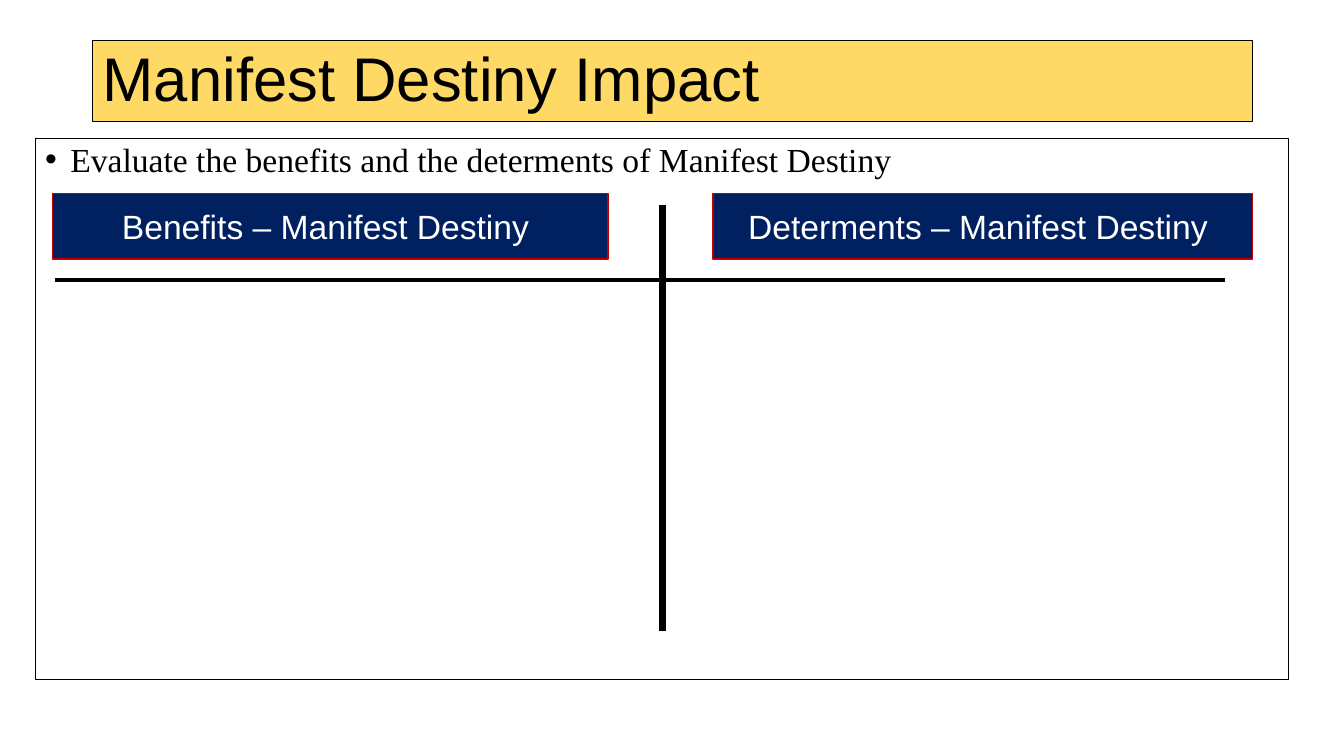
from pptx import Presentation
from pptx.dml.color import RGBColor
from pptx.enum.shapes import MSO_CONNECTOR, MSO_SHAPE
from pptx.enum.text import MSO_ANCHOR, PP_ALIGN
from pptx.oxml.ns import qn
from pptx.util import Emu, Pt
from lxml import etree

RECTANGLE = MSO_SHAPE.RECTANGLE
STRAIGHT = MSO_CONNECTOR.STRAIGHT
TOP, MIDDLE = MSO_ANCHOR.TOP, MSO_ANCHOR.MIDDLE
LEFT, CENTER = PP_ALIGN.LEFT, PP_ALIGN.CENTER
BLANK_LAYOUT = 6
BLACK, WHITE = "000000", "FFFFFF"
GOLD, NAVY, RED = "FFD966", "002060", "C00000"


def px(length):
    return Emu(length * 9144)


def color(value):
    return RGBColor.from_string(value)


class SlideBuilder:
    sans = "Arial"
    serif = "Times New Roman"

    def __init__(self, deck):
        self.slide = deck.slides.add_slide(deck.slide_layouts[BLANK_LAYOUT])

    def box(self, left, top, width, height, text, size, fill=WHITE, line=BLACK,
            line_width=0.75, ink=BLACK, font=sans, align=LEFT, anchor=MIDDLE,
            spacing=1.0, bullet_indent=0):
        box = self.slide.shapes.add_shape(
            RECTANGLE, px(left), px(top), px(width), px(height))
        box.shadow.inherit = False
        box.fill.solid()
        box.fill.fore_color.rgb = color(fill)
        box.line.color.rgb = color(line)
        box.line.width = Pt(line_width)
        frame = box.text_frame
        frame.text = text
        frame.word_wrap = True
        frame.vertical_anchor = anchor
        para = frame.paragraphs[0]
        para.alignment = align
        para.line_spacing = spacing
        if bullet_indent:
            self.bullet(para, bullet_indent)
        span = para.runs[0]
        span.font.name = font
        span.font.size = Pt(size)
        span.font.color.rgb = color(ink)

    def bullet(self, para, indent):
        properties = para._p.get_or_add_pPr()
        properties.set("marL", str(px(indent)))
        properties.set("indent", str(px(-indent)))
        etree.SubElement(properties, qn("a:buFont")).set("typeface", self.sans)
        etree.SubElement(properties, qn("a:buChar")).set("char", "•")

    def rule(self, start_x, start_y, end_x, end_y, width):
        rule = self.slide.shapes.add_connector(
            STRAIGHT, px(start_x), px(start_y), px(end_x), px(end_y))
        rule.line.color.rgb = color(BLACK)
        rule.line.width = Pt(width)
        etree.SubElement(rule._element.spPr, qn("a:effectLst"))


def main():
    deck = Presentation()
    deck.slide_width, deck.slide_height = px(1333), px(750)
    page = SlideBuilder(deck)

    page.box(92, 40, 1150, 81, "Manifest Destiny Impact", 44, fill=GOLD, spacing=0.9)
    page.box(35, 137, 1243, 537,
             "Evaluate the benefits and the determents of Manifest Destiny", 24,
             font=page.serif, anchor=TOP, spacing=0.9, bullet_indent=25)

    for left, width, topic in ((52, 551, "Benefits"), (707, 535, "Determents")):
        page.box(left, 192, width, 65, f"{topic} – Manifest Destiny ", 24,
                 fill=NAVY, line=RED, line_width=1, ink=WHITE, align=CENTER)

    page.rule(55, 278, 1215, 278, 3)
    page.rule(657, 203, 657, 626, 4.5)

    deck.save("out.pptx")


if __name__ == "__main__":
    main()
